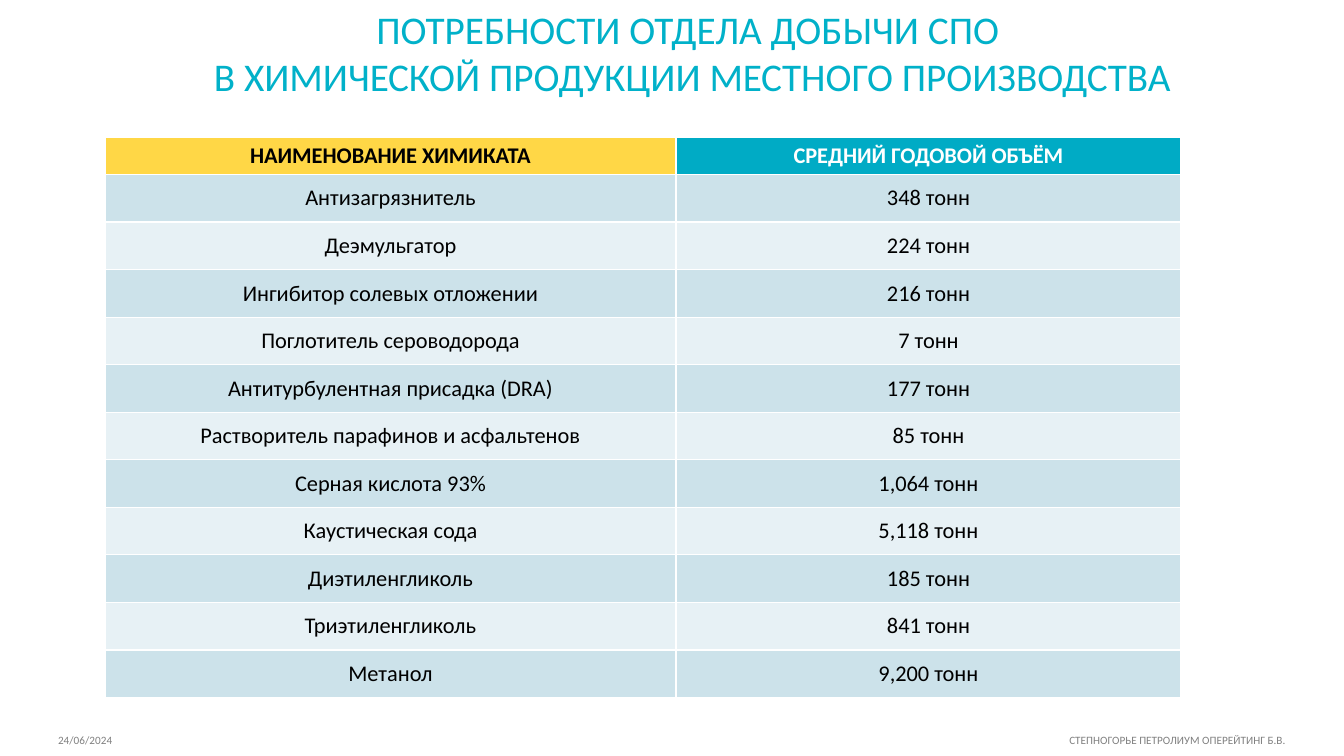
from pptx import Presentation
from pptx import util as u
from pptx.dml.color import RGBColor
from pptx.enum import text
from pptx.oxml import parse_xml
from pptx.oxml.ns import nsdecls

TEAL = RGBColor(0x01, 0xB1, 0xC9)
HEADER_TEAL = RGBColor(0x00, 0xAB, 0xC5)
YELLOW = RGBColor(0xFF, 0xD7, 0x46)
BLUE = RGBColor(0xCC, 0xE2, 0xEA)
PALE = RGBColor(0xE7, 0xF1, 0xF5)
BLACK = RGBColor(0, 0, 0)
WHITE = RGBColor(0xFF, 0xFF, 0xFF)
GRAY = RGBColor(0x80, 0x80, 0x80)

TITLE = "ПОТРЕБНОСТИ ОТДЕЛА ДОБЫЧИ СПО \nВ ХИМИЧЕСКОЙ ПРОДУКЦИИ МЕСТНОГО ПРОИЗВОДСТВА"
HEADINGS = ("НАИМЕНОВАНИЕ ХИМИКАТА", "СРЕДНИЙ ГОДОВОЙ ОБЪЁМ")
CHEMICALS = [
    ("Антизагрязнитель", "348 тонн"),
    ("Деэмульгатор", "224 тонн"),
    ("Ингибитор солевых отложении", "216 тонн"),
    ("Поглотитель сероводорода", "7 тонн"),
    ("Антитурбулентная присадка (DRA)", "177 тонн"),
    ("Растворитель парафинов и асфальтенов", "85 тонн"),
    ("Серная кислота 93%", "1,064 тонн"),
    ("Каустическая сода", "5,118 тонн"),
    ("Диэтиленгликоль", "185 тонн"),
    ("Триэтиленгликоль", "841 тонн"),
    ("Метанол", "9,200 тонн"),
]


def px(length):
    return u.Emu(round(length * 914400 / 100.8))


class Slide:
    font = "Calibri"

    def __init__(self, deck):
        self.page = deck.slides.add_slide(deck.slide_layouts[5])

    def style(self, frame, size, color, align, bold=False):
        for para in frame.paragraphs:
            para.alignment = align
            for span in para.runs:
                span.font.name = self.font
                span.font.size = u.Pt(size)
                span.font.bold = bold
                span.font.color.rgb = color

    def title(self, words, left, top, width, height):
        box = self.page.shapes.title
        box.left, box.top, box.width, box.height = map(px, (left, top, width, height))
        frame = box.text_frame
        frame.text = words
        frame.vertical_anchor = text.MSO_ANCHOR.TOP
        self.style(frame, 28, TEAL, text.PP_ALIGN.CENTER)

    def cell(self, cell, words, fill, color, anchor, bold=False):
        cell.text = words
        cell.fill.solid()
        cell.fill.fore_color.rgb = fill
        cell.vertical_anchor = anchor
        self.style(cell.text_frame, 16, color, text.PP_ALIGN.CENTER, bold)

    def table(self, headings, records, left, top, widths, height, header_height):
        table = self.page.shapes.add_table(
            len(records) + 1, len(headings),
            px(left), px(top), px(sum(widths)), px(height)).table
        for column, width in zip(table.columns, widths):
            column.width = px(width)
        for row in table.rows:
            row.height = px((height - header_height) / len(records))
        table.rows[0].height = px(header_height)
        header_colors = ((YELLOW, BLACK), (HEADER_TEAL, WHITE))
        for column, (heading, colors) in enumerate(zip(headings, header_colors)):
            self.cell(table.cell(0, column), heading, *colors,
                      text.MSO_ANCHOR.TOP, bold=True)
        for row, record in enumerate(records, 1):
            fill = BLUE if row % 2 else PALE
            for column, words in enumerate(record):
                self.cell(table.cell(row, column), words, fill, BLACK,
                          text.MSO_ANCHOR.MIDDLE)

    def footer(self, date, company, left, top, width, height, margin):
        box = self.page.shapes.add_textbox(*map(px, (left, top, width, height)))
        frame = box.text_frame
        frame.word_wrap = True
        frame.margin_left = px(margin)
        frame.margin_right = 0
        para = frame.paragraphs[0]
        para._p.get_or_add_pPr().append(parse_xml(
            f'<a:tabLst {nsdecls("a")}>'
            f'<a:tab pos="{px(width - 2 * margin)}" algn="r"/></a:tabLst>'))
        para.text = f"{date}\t{company}"
        self.style(frame, 8, GRAY, text.PP_ALIGN.LEFT)


def main():
    deck = Presentation()
    deck.slide_width, deck.slide_height = px(1344), px(756)
    slide = Slide(deck)
    slide.title(TITLE, 20, 0, 1344, 111)
    slide.table(HEADINGS, CHEMICALS, 105, 137, (571, 505), 559, 36)
    slide.footer("24/06/2024", "СТЕПНОГОРЬЕ ПЕТРОЛИУМ ОПЕРЕЙТИНГ Б.В.",
                 0, 728, 1344, 28, 58)
    deck.save("out.pptx")


if __name__ == "__main__":
    main()
